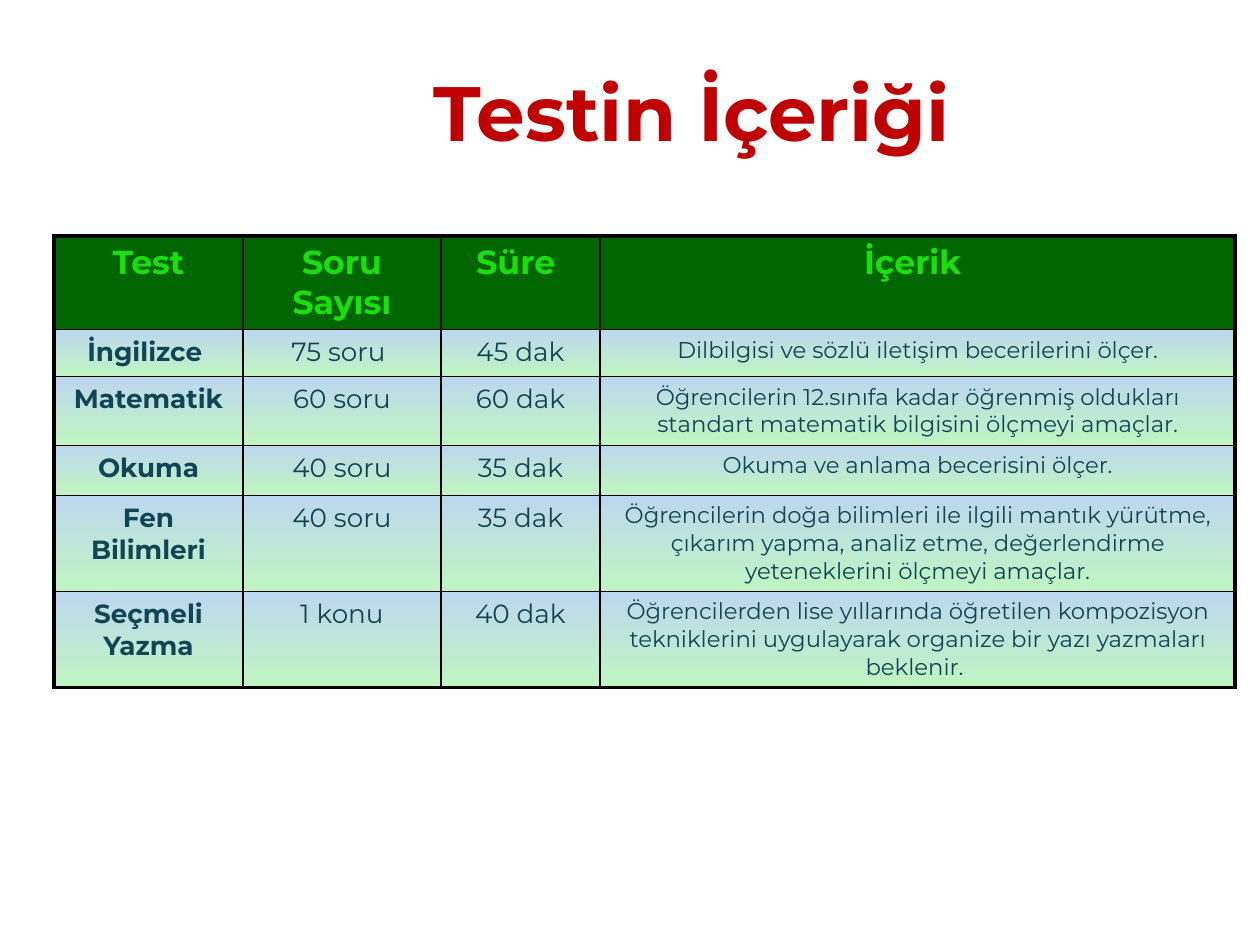
from dataclasses import dataclass

from lxml.etree import SubElement
from pptx import Presentation
from pptx.dml.color import RGBColor
from pptx.enum.text import MSO_ANCHOR, PP_ALIGN
from pptx.oxml.ns import qn
from pptx.util import Emu, Pt

SCALE = 914400 // 126  # EMU in one px


def px(n):
    return Emu(n * SCALE)


@dataclass(frozen=True)
class Theme:
    font: str = "Montserrat"
    title: str = "C00000"
    head: str = "19E00A"
    ink: str = "114454"
    green: str = "006600"
    sky: str = "BDD7EE"
    mint: str = "C0F5C3"
    line: str = "000000"
    title_size: int = 44
    head_size: int = 19
    label_size: int = 15
    note_size: int = 13
    thin: float = 1
    thick: float = 2.25


class Deck:
    def __init__(self, theme):
        self.theme = theme
        self.prs = Presentation()
        self.prs.slide_width, self.prs.slide_height = px(1260), px(945)
        self.slide = self.prs.slides.add_slide(self.prs.slide_layouts[5])

    def label(self, frame, text, size, color, bold):
        """Fill a frame with one centred paragraph and return it."""
        frame.text = text
        para = frame.paragraphs[0]
        para.alignment = PP_ALIGN.CENTER
        for run in para.runs:
            font = run.font
            font.name, font.size, font.bold = self.theme.font, Pt(size), bold
            font.color.rgb = RGBColor.from_string(color)
        return para

    def title(self, text, x, y, w, h):
        shape = self.slide.shapes.title
        shape.left, shape.top, shape.width, shape.height = map(px, (x, y, w, h))
        frame = shape.text_frame
        frame.vertical_anchor = MSO_ANCHOR.TOP
        para = self.label(frame, text, self.theme.title_size, self.theme.title, True)
        para.line_spacing = 0.8

    def border(self, cell, outer):
        """Draw four cell edges; those named in outer are thick."""
        props = cell._tc.get_or_add_tcPr()
        for side in "LRTB":
            width = self.theme.thick if side in outer else self.theme.thin
            edge = SubElement(props, qn("a:ln" + side), w=str(Pt(width)))
            fill = SubElement(edge, qn("a:solidFill"))
            SubElement(fill, qn("a:srgbClr"), val=self.theme.line)

    def paint(self, cell, *colors):
        """Fill a cell with one colour, or fade from the first down to the last."""
        fill = cell.fill
        if len(colors) == 1:
            fill.solid()
            fill.fore_color.rgb = RGBColor.from_string(colors[0])
            return
        fill.gradient()
        fill.gradient_angle = 270
        for stop, color in zip(fill.gradient_stops, colors):
            stop.color.rgb = RGBColor.from_string(color)

    def table(self, rows, x, y, widths, heights):
        theme = self.theme
        last_row, last_col = len(heights) - 1, len(widths) - 1
        table = self.slide.shapes.add_table(
            len(heights), len(widths), px(x), px(y),
            px(sum(widths)), px(sum(heights))).table
        table.first_row = table.horz_banding = False
        for col, width in zip(table.columns, widths):
            col.width = px(width)
        for row, height in zip(table.rows, heights):
            row.height = px(height)
        for r, texts in enumerate(rows):
            for c, text in enumerate(texts):
                cell = table.cell(r, c)
                ends = {"L": c == 0, "R": c == last_col,
                        "T": r == 0, "B": r == last_row}
                self.border(cell, [side for side, hit in ends.items() if hit])
                if r == 0:
                    self.paint(cell, theme.green)
                    size, color = theme.head_size, theme.head
                else:
                    self.paint(cell, theme.sky, theme.mint)
                    size = theme.note_size if c == last_col else theme.label_size
                    color = theme.ink
                self.label(cell.text_frame, text, size, color, r == 0 or c == 0)

    def save(self):
        self.prs.save("out.pptx")


TESTS = [
    ("Test", "Soru Sayısı", "Süre ", "İçerik "),
    ("İngilizce ", "75 soru ", "45 dak",
     "Dilbilgisi ve sözlü iletişim becerilerini ölçer."),
    ("Matematik", "60 soru", "60 dak",
     "Öğrencilerin 12.sınıfa kadar öğrenmiş oldukları standart matematik "
     "bilgisini ölçmeyi amaçlar."),
    ("Okuma", "40 soru", "35 dak", "Okuma ve anlama becerisini ölçer."),
    ("Fen Bilimleri", "40 soru", "35 dak",
     "Öğrencilerin doğa bilimleri ile ilgili mantık yürütme, çıkarım yapma, "
     "analiz etme, değerlendirme yeteneklerini ölçmeyi amaçlar."),
    ("Seçmeli Yazma", "1 konu", "40 dak",
     "Öğrencilerden lise yıllarında öğretilen kompozisyon tekniklerini "
     "uygulayarak organize bir yazı yazmaları beklenir. "),
]


def main():
    deck = Deck(Theme())
    deck.title("Testin İçeriği", 149, 76, 1086, 89)
    deck.table(TESTS, 54, 236, (189, 198, 159, 635), (53, 47, 69, 50, 69, 76))
    deck.save()


if __name__ == "__main__":
    main()
